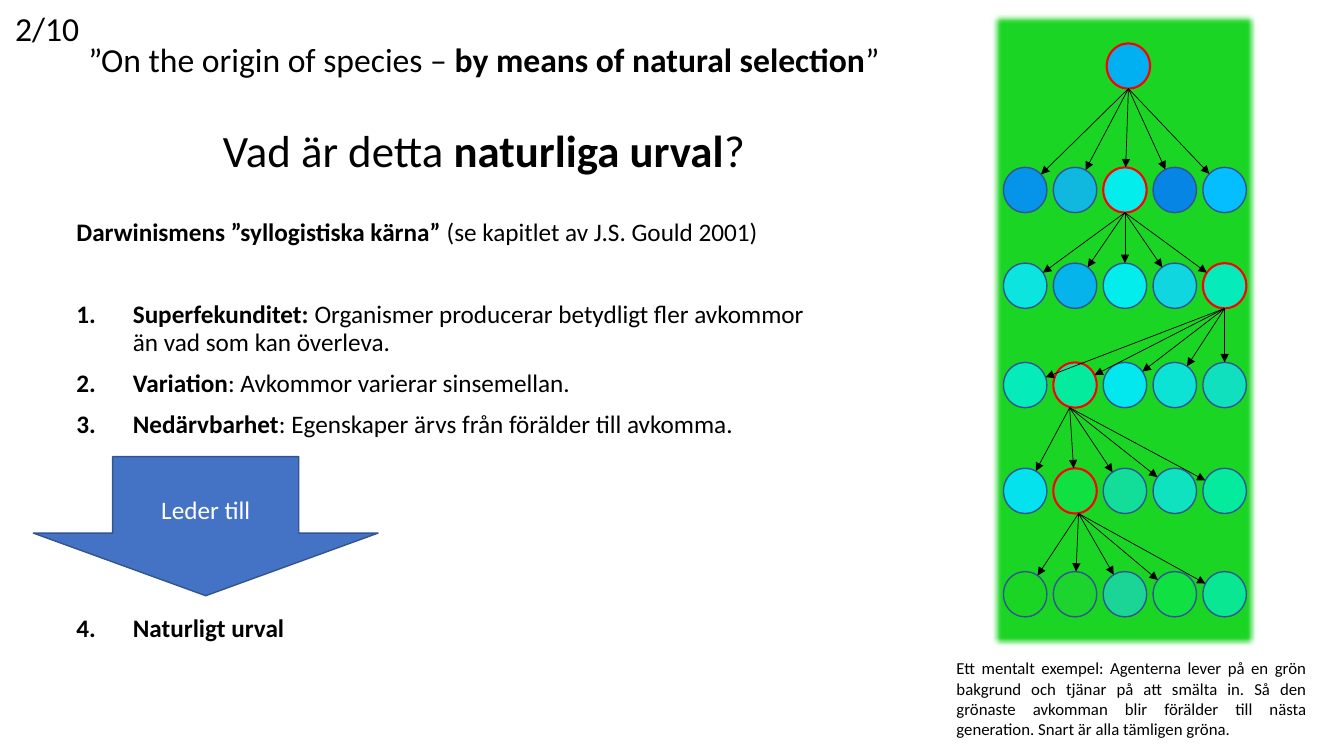
from dataclasses import dataclass
from math import hypot

from lxml.etree import SubElement
from pptx import Presentation
from pptx.dml.color import RGBColor
from pptx.enum.shapes import MSO_CONNECTOR, MSO_SHAPE
from pptx.enum.text import MSO_ANCHOR, PP_ALIGN
from pptx.oxml.ns import qn
from pptx.util import Inches, Pt

SLIDE_WIDTH = Inches(13.33)
SLIDE_HEIGHT = Inches(7.5)


@dataclass(frozen=True)
class Theme:
    font: str = "Calibri"
    ink: str = "000000"
    paper: str = "FFFFFF"
    habitat: str = "1BD524"
    conclusion: str = "4472C4"
    outline: str = "325491"
    chosen: str = "FF0000"
    question: int = 32
    heading: int = 24
    body: int = 18
    caption: int = 12


@dataclass(frozen=True)
class Area:
    """Shares of the slide, in percent."""
    left: float
    top: float
    width: float
    height: float

    def emu(self) -> tuple[int, int, int, int]:
        return across(self.left), down(self.top), across(self.width), down(self.height)


@dataclass(frozen=True)
class Phrase:
    text: str
    bold: bool = False


@dataclass(frozen=True)
class Line:
    phrases: tuple[Phrase, ...]
    size: int
    before: float = 0
    align: PP_ALIGN = PP_ALIGN.LEFT
    spacing: float = 0.9
    numbered: bool = False


@dataclass(frozen=True)
class Generation:
    row: float
    colours: tuple[str, ...]
    parent: int | None = None
    exit_shift: float = 0


THEME = Theme()
FIRST_COLUMN, COLUMN_STEP = 76.28, 3.71
AGENT_WIDTH, AGENT_HEIGHT = 3.23, 6.0
ANCESTOR_COLUMN = 2.07

ANCESTOR = Generation(8.73, ("00B0F0",), 0)
DESCENDANTS = (
    Generation(25.13, ("0693EA", "10B8E0", "03EDED", "0685E4", "05BEFF"), 2),
    Generation(37.8, ("0CE4DF", "05B4EB", "03EDED", "10D6E0", "05EBBA"), 4),
    Generation(50.93, ("05EBBA", "05EB9E", "02E8EE", "0DE3D4", "10E0BD"), 1, -0.4),
    Generation(64.93, ("03E2ED", "10E042", "12DE9A", "0EE2BF", "05EB9E"), 1, 0.26),
    Generation(78.6, ("1BD524", "1DD32E", "1BD597", "10E042", "09E792")),
)

TITLE = (
    Line((Phrase("”On the origin of species – "), Phrase("by means of natural selection", True),
          Phrase("”")), THEME.heading, align=PP_ALIGN.CENTER),
    Line((Phrase("Vad är detta "), Phrase("naturliga urval", True), Phrase("?")),
         THEME.question, before=35, align=PP_ALIGN.CENTER),
)
ARGUMENT = (
    Line((Phrase("Darwinismens ”syllogistiska kärna” ", True),
          Phrase("(se kapitlet av J.S. Gould 2001)")), THEME.body),
    Line((Phrase("Superfekunditet: ", True),
          Phrase("Organismer producerar betydligt fler avkommor än vad som kan överleva.")),
         THEME.body, before=39.5, numbered=True),
    Line((Phrase("Variation", True), Phrase(": Avkommor varierar sinsemellan.")),
         THEME.body, before=10, numbered=True),
    Line((Phrase("Nedärvbarhet", True), Phrase(": Egenskaper ärvs från förälder till avkomma.")),
         THEME.body, before=10, numbered=True),
    Line((Phrase("Naturligt urval", True),), THEME.body, before=126.5, numbered=True),
)
CAPTION = (
    Line((Phrase("Ett mentalt exempel: Agenterna lever på en grön bakgrund och tjänar på att "
                 "smälta in. Så den grönaste avkomman blir förälder till nästa generation. "
                 "Snart är alla tämligen gröna."),),
         THEME.caption, align=PP_ALIGN.JUSTIFY, spacing=1),
)
PAGE = (Line((Phrase("2/10"),), THEME.heading, spacing=1),)
LEADS_TO = (Line((Phrase("Leder till"),), THEME.body, align=PP_ALIGN.CENTER, spacing=1),)


def across(share: float) -> int:
    return round(SLIDE_WIDTH * share / 100)


def down(share: float) -> int:
    return round(SLIDE_HEIGHT * share / 100)


def rgb(colour: str) -> RGBColor:
    return RGBColor.from_string(colour)


def write(frame, lines: tuple[Line, ...], colour: str = THEME.ink) -> None:
    for index, line in enumerate(lines):
        paragraph = frame.paragraphs[0] if index == 0 else frame.add_paragraph()
        paragraph.alignment = line.align
        paragraph.line_spacing = line.spacing
        paragraph.space_before = Pt(line.before)
        if line.numbered:
            properties = paragraph._p.get_or_add_pPr()
            properties.set("marL", str(Inches(0.56)))
            properties.set("indent", str(-Inches(0.56)))
            SubElement(properties, qn("a:buAutoNum"), type="arabicPeriod")
        for phrase in line.phrases:
            run = paragraph.add_run()
            run.text = phrase.text
            run.font.name = THEME.font
            run.font.size = Pt(line.size)
            run.font.bold = phrase.bold
            run.font.color.rgb = rgb(colour)


def add_text(slide, area: Area, lines: tuple[Line, ...], wrap: bool = True,
             anchor: MSO_ANCHOR = MSO_ANCHOR.TOP) -> None:
    frame = slide.shapes.add_textbox(*area.emu()).text_frame
    frame.word_wrap = wrap
    frame.vertical_anchor = anchor
    write(frame, lines)


def add_figure(slide, kind: MSO_SHAPE, area: Area, fill: str,
               outline: str | None = None, weight: float = 1):
    figure = slide.shapes.add_shape(kind, *area.emu())
    figure.shadow.inherit = False
    figure.fill.solid()
    figure.fill.fore_color.rgb = rgb(fill)
    if outline:
        figure.line.color.rgb = rgb(outline)
        figure.line.width = Pt(weight)
    else:
        figure.line.fill.background()
    return figure


def add_habitat(slide) -> None:
    habitat = add_figure(slide, MSO_SHAPE.RECTANGLE, Area(73.54, 1.4, 20.18, 84.53),
                         THEME.habitat)
    effects = habitat._element.spPr.find(qn("a:effectLst"))
    SubElement(effects, qn("a:softEdge"), rad=str(Pt(5)))


def add_agent(slide, column: float, row: float, fill: str, chosen: bool) -> tuple[int, int]:
    centre = FIRST_COLUMN + column * COLUMN_STEP
    area = Area(centre - AGENT_WIDTH / 2, row - AGENT_HEIGHT / 2, AGENT_WIDTH, AGENT_HEIGHT)
    add_figure(slide, MSO_SHAPE.OVAL, area, fill,
               THEME.chosen if chosen else THEME.outline, 1.5 if chosen else 1)
    return across(centre), down(row)


def add_descent(slide, start: tuple[int, int], child: tuple[int, int]) -> None:
    run, fall = child[0] - start[0], child[1] - start[1]
    reach = 1 - 1 / hypot(run / across(AGENT_WIDTH / 2), fall / down(AGENT_HEIGHT / 2))
    arrow = slide.shapes.add_connector(
        MSO_CONNECTOR.STRAIGHT, *start,
        round(start[0] + run * reach), round(start[1] + fall * reach))
    arrow.line.color.rgb = rgb(THEME.ink)
    arrow.line.width = Pt(0.5)
    SubElement(arrow.line._get_or_add_ln(), qn("a:tailEnd"), type="triangle")
    SubElement(arrow._element.spPr, qn("a:effectLst"))


def leave(parent: tuple[int, int], generation: Generation) -> tuple[int, int]:
    return parent[0] + across(generation.exit_shift), parent[1] + down(AGENT_HEIGHT / 2)


def add_family(slide) -> None:
    ancestor = add_agent(slide, ANCESTOR_COLUMN, ANCESTOR.row, ANCESTOR.colours[0], True)
    start = leave(ancestor, ANCESTOR)
    for generation in DESCENDANTS:
        children = [add_agent(slide, column, generation.row, colour, column == generation.parent)
                    for column, colour in enumerate(generation.colours)]
        for child in children:
            add_descent(slide, start, child)
        if generation.parent is not None:
            start = leave(children[generation.parent], generation)


def add_conclusion(slide) -> None:
    conclusion = add_figure(slide, MSO_SHAPE.DOWN_ARROW, Area(2.48, 60.4, 25.65, 18.4),
                            THEME.conclusion, THEME.outline)
    conclusion.adjustments[0] = 0.54
    conclusion.adjustments[1] = 0.45
    conclusion.text_frame.vertical_anchor = MSO_ANCHOR.MIDDLE
    write(conclusion.text_frame, LEADS_TO, THEME.paper)


def main() -> None:
    deck = Presentation()
    deck.slide_width, deck.slide_height = SLIDE_WIDTH, SLIDE_HEIGHT
    slide = deck.slides.add_slide(deck.slide_layouts[6])
    add_text(slide, Area(3.52, 4.93, 64.97, 19.33), TITLE, anchor=MSO_ANCHOR.MIDDLE)
    add_text(slide, Area(4.95, 28.4, 55.88, 40.8), ARGUMENT)
    add_habitat(slide)
    add_family(slide)
    add_conclusion(slide)
    add_text(slide, Area(70.43, 86.4, 27.53, 12.13), CAPTION)
    add_text(slide, Area(0.38, 0.4, 6.3, 6.67), PAGE, wrap=False)
    deck.save("out.pptx")


if __name__ == "__main__":
    main()
